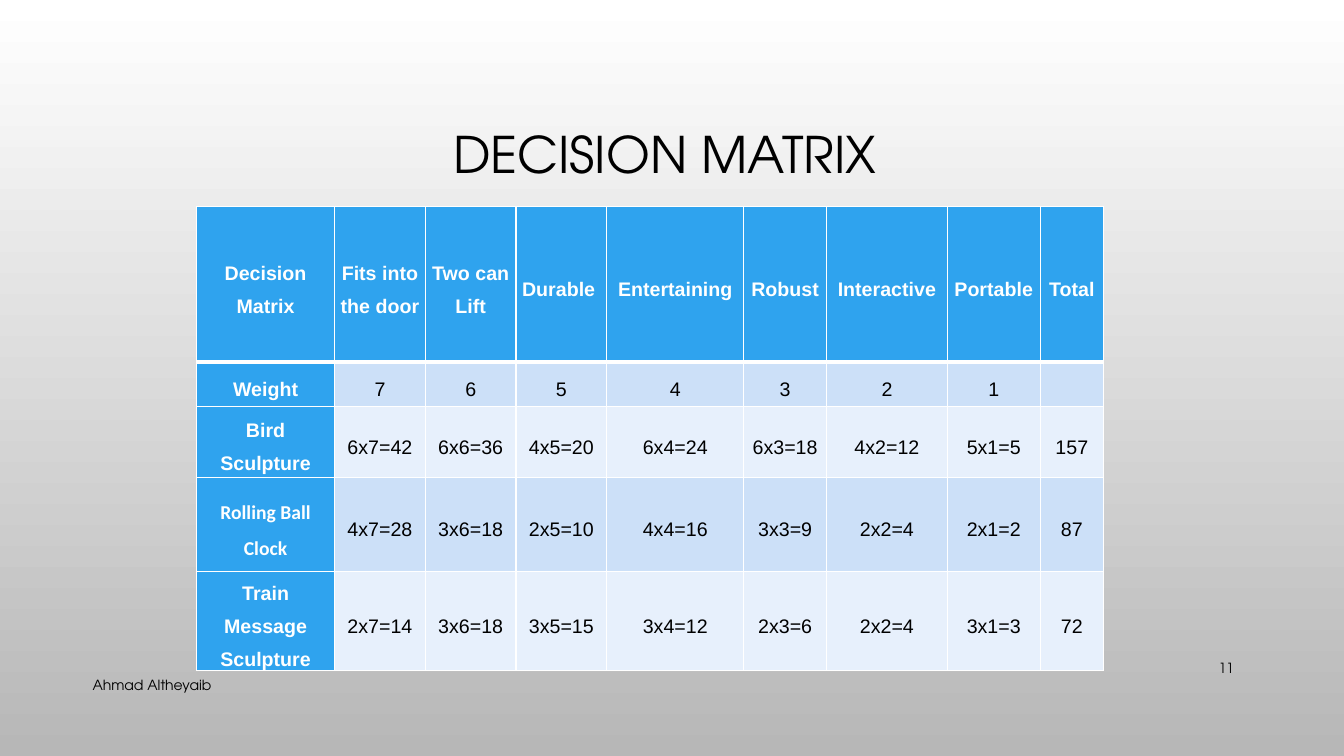
from typing import NamedTuple

from lxml import etree
from pptx import Presentation
from pptx import util as u
from pptx.dml.color import RGBColor
from pptx.enum import text
from pptx.oxml import ns

WHITE = RGBColor(0xFF, 0xFF, 0xFF)
BLACK = RGBColor(0, 0, 0)
GREY = RGBColor(0xB7, 0xB7, 0xB7)
BLUE = RGBColor(0x2F, 0xA3, 0xEE)
BAND_DARK = RGBColor(0xCC, 0xE0, 0xF8)
BAND_LIGHT = RGBColor(0xE7, 0xF0, 0xFC)
DISPLAY_FONT = "TeX Gyre Adventor"


class Box(NamedTuple):
    left: float
    top: float
    width: float
    height: float


class Label(NamedTuple):
    words: str
    box: Box
    align: text.PP_ALIGN
    anchor: text.MSO_ANCHOR


class Row(NamedTuple):
    height: float
    cells: tuple
    head_font: str = "Arial"


TITLE_BOX = Box(72, 48.96, 815.76, 126)
TABLE_BOX = Box(140.4, 147.6, 648, 327.6)
COLUMNS = (98.64, 64.8, 64.8, 64.8, 97.92, 59.04, 86.4, 66.24, 45.36)
ROWS = (
    Row(110.88, ("Decision Matrix", "Fits into the door", "Two can Lift", "Durable ",
                 "Entertaining", "Robust", "Interactive", "Portable", "Total")),
    Row(31.68, ("Weight", "7", "6", "5", "4", "3", "2", "1", "")),
    Row(51.12, ("Bird Sculpture", "6x7=42", "6x6=36", "4x5=20", "6x4=24",
                "6x3=18", "4x2=12", "5x1=5", "157")),
    Row(66.96, ("Rolling Ball Clock", "4x7=28", "3x6=18", "2x5=10", "4x4=16",
                "3x3=9", "2x2=4", "2x1=2", "87"), "Calibri"),
    Row(66.96, ("Train Message Sculpture", "2x7=14", "3x6=18", "3x5=15", "3x4=12",
                "2x3=6", "2x2=4", "3x1=3", "72")),
)
LABELS = (
    Label("Ahmad Altheyaib", Box(59.04, 479.52, 525.6, 28.8),
          text.PP_ALIGN.LEFT, text.MSO_ANCHOR.TOP),
    Label("11", Box(828, 462.96, 60.48, 28.8),
          text.PP_ALIGN.RIGHT, text.MSO_ANCHOR.MIDDLE),
)


def style(p, font: str, size: float, color: RGBColor, align, bold: bool = False) -> None:
    p.alignment = align
    p.font.name = font
    p.font.size = u.Pt(size)
    p.font.bold = bold
    p.font.color.rgb = color


def set_borders(cell, top: float, bottom: float) -> None:
    tc_pr = cell._tc.get_or_add_tcPr()
    for side, width in (("L", 1), ("R", 1), ("T", top), ("B", bottom)):
        ln = etree.SubElement(tc_pr, ns.qn(f"a:ln{side}"), w=str(u.Pt(width)))
        fill = etree.SubElement(ln, ns.qn("a:solidFill"))
        etree.SubElement(fill, ns.qn("a:srgbClr"), val=str(WHITE))


def draw_background(s) -> None:
    fill = s.background.fill
    fill.gradient()
    fill.gradient_angle = 270
    for stop, color, position in zip(fill.gradient_stops, (WHITE, GREY), (0, 1)):
        stop.color.rgb = color
        stop.position = position


def draw_title(s) -> None:
    sp = s.shapes.title
    sp.left, sp.top, sp.width, sp.height = map(u.Pt, TITLE_BOX)
    tf = sp.text_frame
    tf.text = "DECISION MATRIX "
    tf.auto_size = text.MSO_AUTO_SIZE.NONE
    tf.vertical_anchor = text.MSO_ANCHOR.MIDDLE
    p = tf.paragraphs[0]
    p.line_spacing = 0.9
    style(p, DISPLAY_FONT, 36, BLACK, text.PP_ALIGN.CENTER)


def draw_cell(cell, row: Row, i: int, j: int) -> None:
    header = i == 0 or j == 0
    band = BAND_DARK if i % 2 else BAND_LIGHT
    set_borders(cell, 3 if i == 1 else 1, 3 if i == 0 else 1)
    cell.fill.solid()
    cell.fill.fore_color.rgb = BLUE if header else band
    cell.margin_left = cell.margin_right = u.Pt(4.32)
    cell.margin_top = cell.margin_bottom = 0
    cell.vertical_anchor = text.MSO_ANCHOR.MIDDLE
    cell.text = row.cells[j]
    p = cell.text_frame.paragraphs[0]
    p.line_spacing = 1.5
    style(p, row.head_font if j == 0 else "Arial", 14,
          WHITE if header else BLACK, text.PP_ALIGN.CENTER, header)


def draw_matrix(s) -> None:
    table = s.shapes.add_table(len(ROWS), len(COLUMNS), *map(u.Pt, TABLE_BOX)).table
    for column, width in zip(table.columns, COLUMNS):
        column.width = u.Pt(width)
    for i, row in enumerate(ROWS):
        table.rows[i].height = u.Pt(row.height)
        for j in range(len(COLUMNS)):
            draw_cell(table.cell(i, j), row, i, j)


def draw_label(s, label: Label) -> None:
    tf = s.shapes.add_textbox(*map(u.Pt, label.box)).text_frame
    tf.word_wrap = True
    tf.vertical_anchor = label.anchor
    tf.text = label.words
    style(tf.paragraphs[0], DISPLAY_FONT, 10, BLACK, label.align)


def main() -> None:
    prs = Presentation()
    prs.slide_width, prs.slide_height = u.Pt(960), u.Pt(540)
    s = prs.slides.add_slide(prs.slide_layouts[5])
    draw_background(s)
    draw_title(s)
    draw_matrix(s)
    for label in LABELS:
        draw_label(s, label)
    prs.save("out.pptx")


if __name__ == "__main__":
    main()
